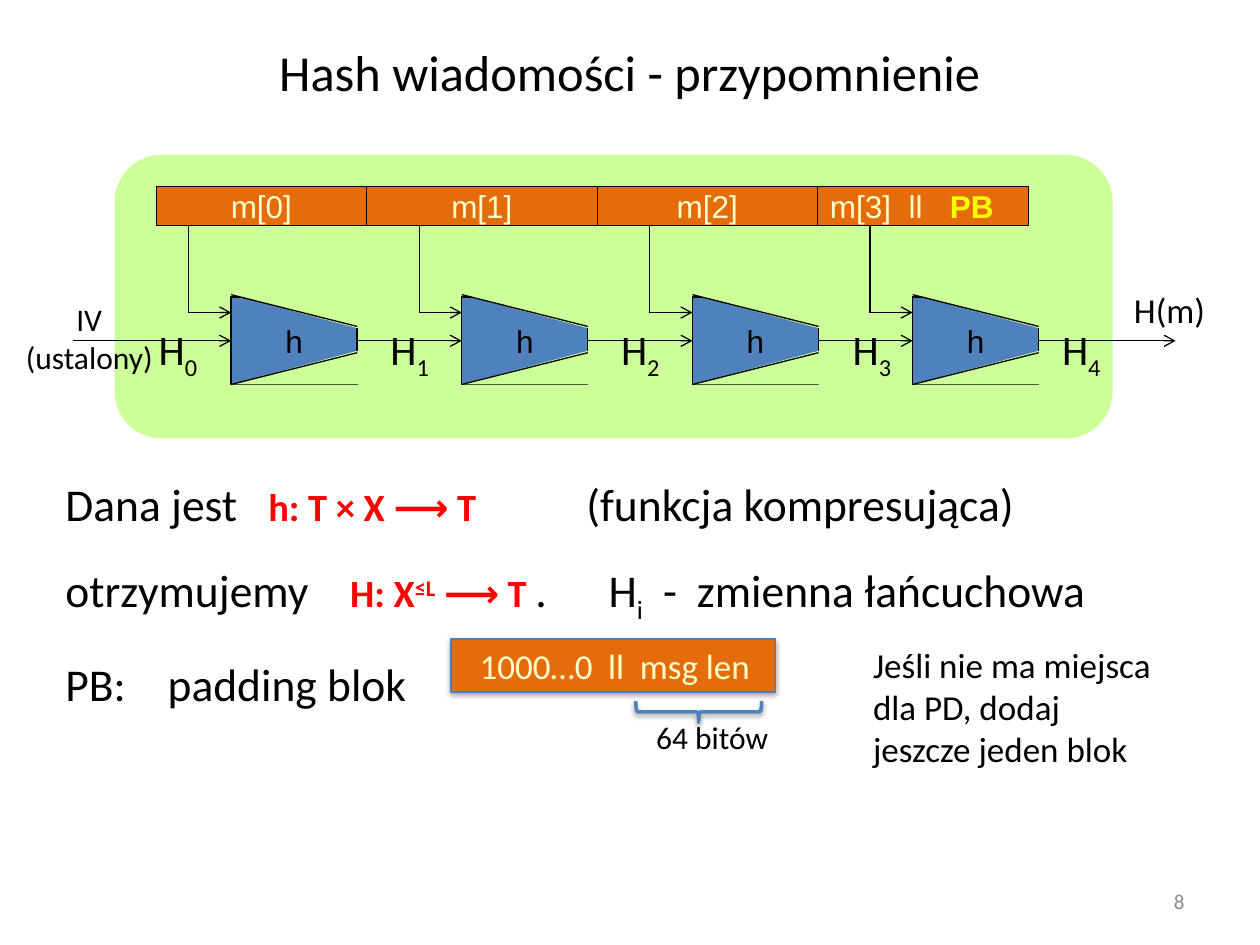
from dataclasses import dataclass
from typing import Optional

import lxml.etree
import pptx
import pptx.dml.color
import pptx.enum.shapes
import pptx.enum.text
import pptx.oxml.ns
import pptx.util

Cm, Pt = pptx.util.Cm, pptx.util.Pt
RGB = pptx.dml.color.RGBColor.from_string
SHAPE = pptx.enum.shapes.MSO_SHAPE
STRAIGHT = pptx.enum.shapes.MSO_CONNECTOR.STRAIGHT
ALIGN = pptx.enum.text.PP_ALIGN
ANCHOR = pptx.enum.text.MSO_ANCHOR
qn = pptx.oxml.ns.qn


@dataclass(frozen=True)
class Theme:
    font: str = "Calibri"
    diagram_font: str = "Arial"
    black: str = "000000"
    gray: str = "8C8C8C"
    red: str = "FF0000"
    yellow: str = "FFFF00"
    cream: str = "FFFFCC"
    green: str = "CCFF99"
    blue: str = "4F81BD"
    blue_edge: str = "4B7EBC"
    orange: str = "E46C0A"
    title: float = 28.8
    body: float = 26
    chain: float = 24
    formula: float = 22
    note: float = 20
    label: float = 18
    page: float = 12
    thin: float = 0.75


T = Theme()


@dataclass(frozen=True)
class Run:
    text: str
    size: Optional[float] = None
    color: Optional[str] = None
    bold: Optional[bool] = None
    baseline: int = 0  # percent, negative for subscript


@dataclass(frozen=True)
class Para:
    runs: tuple[Run, ...]
    size: float
    color: str = T.black
    font: str = T.font
    align: ALIGN = ALIGN.LEFT
    before: float = 0
    tabs: tuple[float, ...] = ()  # cm from the text edge


@dataclass(frozen=True)
class Box:
    x: float
    y: float
    w: float
    h: float

    def emu(self) -> list[int]:
        return [Cm(v) for v in (self.x, self.y, self.w, self.h)]


def write(s, paras: list[Para], wrap: bool = True, anchor=ANCHOR.TOP) -> None:
    tf = s.text_frame
    tf.word_wrap, tf.vertical_anchor = wrap, anchor
    for i, para in enumerate(paras):
        p = tf.paragraphs[0] if i == 0 else tf.add_paragraph()
        p.alignment, p.space_before = para.align, Pt(para.before)
        p.font.size, p.font.name = Pt(para.size), para.font
        p.font.color.rgb = RGB(para.color)
        if para.tabs:
            tab_list = lxml.etree.Element(qn("a:tabLst"))
            for pos in para.tabs:
                lxml.etree.SubElement(tab_list, qn("a:tab"), pos=str(Cm(pos)), algn="l")
            p._p.pPr.find(qn("a:defRPr")).addprevious(tab_list)
        for run in para.runs:
            r = p.add_run()
            r.text, r.font.bold = run.text, run.bold
            if run.size:
                r.font.size = Pt(run.size)
            if run.color:
                r.font.color.rgb = RGB(run.color)
            if run.baseline:
                r._r.get_or_add_rPr().set("baseline", str(run.baseline * 1000))


def text(shapes, box: Box, paras: list[Para], wrap: bool = True, anchor=ANCHOR.TOP) -> None:
    write(shapes.add_textbox(*box.emu()), paras, wrap, anchor)


def shape(shapes, kind, box: Box, fill: Optional[str], edge: Optional[str] = None,
          width: float = T.thin):
    s = shapes.add_shape(kind, *box.emu())
    s.shadow.inherit = False
    if fill:
        s.fill.solid()
        s.fill.fore_color.rgb = RGB(fill)
    else:
        s.fill.background()
    if edge:
        s.line.color.rgb, s.line.width = RGB(edge), Pt(width)
    else:
        s.line.fill.background()
    return s


def drop_shadow(s, alpha: int) -> None:
    effects = s._element.spPr.find(qn("a:effectLst"))
    shadow = lxml.etree.SubElement(effects, qn("a:outerShdw"), blurRad=str(Pt(3.1)),
                                   dist=str(Pt(1.7)), dir="5400000", rotWithShape="0")
    color = lxml.etree.SubElement(shadow, qn("a:srgbClr"), val=T.black)
    lxml.etree.SubElement(color, qn("a:alpha"), val=str(alpha * 1000))


def line(shapes, x1: float, y1: float, x2: float, y2: float, arrow: bool = False,
         start=None, end=None) -> None:
    c = shapes.add_connector(STRAIGHT, Cm(x1), Cm(y1), Cm(x2), Cm(y2))
    c.line.color.rgb, c.line.width = RGB(T.black), Pt(T.thin)
    if arrow:
        lxml.etree.SubElement(c.line._get_or_add_ln(), qn("a:tailEnd"), type="arrow")
    lxml.etree.SubElement(c._element.spPr, qn("a:effectLst"))
    if start is not None:
        c.begin_connect(start, 3)
    if end is not None:
        c.end_connect(end, 1)


STAGE_W, STAGE_H, STAGE_Y = 2.54, 1.76, 5.99
MID_Y = STAGE_Y + STAGE_H / 2
BLOCK_Y, BLOCK_H = 3.76, 0.79


def stage(shapes, x: float):
    """Compression block: a rectangle with two corners cut off."""
    s = shape(shapes, SHAPE.RECTANGLE, Box(x, STAGE_Y, STAGE_W, STAGE_H), T.blue, T.black)
    write(s, [Para((Run("h"),), T.label, font=T.diagram_font, align=ALIGN.CENTER)],
          False, ANCHOR.MIDDLE)
    for y, flip_v, y1, y2 in ((5.94, "1", 5.94, 6.58), (6.96, "0", 7.75, 7.11)):
        corner = shape(shapes, SHAPE.RIGHT_TRIANGLE, Box(x, y, 2.97, 0.79), T.green)
        xfrm = corner._element.spPr.xfrm
        xfrm.set("flipH", "1")
        xfrm.set("flipV", flip_v)
        line(shapes, x, y1, x + STAGE_W, y2)
    return s


def feed(shapes, stage_x: float) -> None:
    """Elbow from a message block to its compression block."""
    x, y = stage_x - 0.86, 6.3
    line(shapes, x, BLOCK_Y + BLOCK_H, x, y)
    line(shapes, x, y, stage_x, y, arrow=True)


def main() -> None:
    prs = pptx.Presentation()
    prs.slide_width, prs.slide_height = Cm(25.4), Cm(19.05)
    shapes = prs.slides.add_slide(prs.slide_layouts[6]).shapes

    # Title and page number
    text(shapes, Box(1.27, 0.76, 22.86, 1.37),
         [Para((Run("Hash wiadomości - przypomnienie"),), T.title, align=ALIGN.CENTER)],
         anchor=ANCHOR.MIDDLE)
    text(shapes, Box(18.2, 17.65, 5.93, 1.02),
         [Para((Run("8"),), T.page, T.gray, align=ALIGN.RIGHT)], anchor=ANCHOR.MIDDLE)

    # Definitions
    formula = dict(size=T.formula, color=T.red, bold=True)
    text(shapes, Box(1.07, 9.47, 22.66, 5.87), [
        Para((Run("Dana jest\t"), Run("h: T × X ⟶ T", **formula),
              Run("\t(funkcja kompresująca)")), T.body, before=5.2, tabs=(4.09, 10.5)),
        Para((Run("otrzymujemy\t"), Run("H: X", **formula),
              Run("≤L", baseline=30, **formula), Run(" ⟶ T ", **formula), Run(".\tH"),
              Run("i", baseline=-25), Run("\t-\tzmienna łańcuchowa")),
             T.body, before=18.2, tabs=(5.74, 10.95, 12.05, 12.73)),
        Para((Run("PB:\tpadding blok"),), T.body, before=18.2, tabs=(2.06,)),
    ])

    # Message blocks
    shape(shapes, SHAPE.ROUNDED_RECTANGLE, Box(2.31, 3.12, 20.12, 5.72), T.green)
    edges = (3.15, 7.39, 12.04, 16.48, 20.73)
    for i, (left, right) in enumerate(zip(edges, edges[1:])):
        s = shape(shapes, SHAPE.RECTANGLE, Box(left, BLOCK_Y, right - left, BLOCK_H),
                  T.orange, T.black)
        runs, align, tabs = (Run(f"m[{i}]"),), ALIGN.CENTER, ()
        if i == 3:
            runs += (Run("\tll\t"), Run("PB", color=T.yellow, bold=True))
            align, tabs = ALIGN.LEFT, (1.59, 2.42)
        write(s, [Para(runs, T.label, T.cream, T.diagram_font, align, tabs=tabs)],
              anchor=ANCHOR.MIDDLE)

    # Compression chain
    stage_xs = (4.66, 9.31, 13.96, 18.4)
    stages = [stage(shapes, x) for x in stage_xs]
    for x in stage_xs:
        feed(shapes, x)
    line(shapes, 1.47, MID_Y, stage_xs[0], MID_Y, True, end=stages[0])
    for x, next_x, s, next_s in zip(stage_xs, stage_xs[1:], stages, stages[1:]):
        line(shapes, x + STAGE_W, MID_Y, next_x, MID_Y, True, s, next_s)
    line(shapes, stage_xs[-1] + STAGE_W, MID_Y, 23.7, MID_Y, True, stages[-1])

    # Chain labels
    text(shapes, Box(0.25, 5.92, 3.1, 1.8),
         [Para((Run(t),), T.label, align=ALIGN.CENTER) for t in ("IV", "(ustalony)")], False)
    text(shapes, Box(22.61, 5.69, 1.96, 1.12), [Para((Run("H(m)"),), T.note)], False)
    for i, x in enumerate((2.95, 7.62, 12.27, 16.94, 21.16)):
        text(shapes, Box(x, 6.4, 1.35, 1.27),
             [Para((Run("H"), Run(str(i), baseline=-25)), T.chain)])

    # Padding block
    s = shape(shapes, SHAPE.RECTANGLE, Box(9.09, 12.88, 6.55, 1.07), T.orange, T.blue_edge)
    drop_shadow(s, 35)
    write(s, [Para((Run("1000…0\tll\tmsg len"),), T.note, T.cream, tabs=(2.59, 3.23))],
          anchor=ANCHOR.MIDDLE)
    s.text_frame.margin_left, s.text_frame.margin_right = Cm(0.58), 0
    brace = shape(shapes, SHAPE.RIGHT_BRACE, Box(13.87, 13.08, 0.43, 2.54), None, T.blue, 2)
    brace.rotation = 90
    drop_shadow(brace, 38)
    text(shapes, Box(12.98, 14.35, 2.79, 1.02), [Para((Run("64 bitów"),), T.label)], False)
    text(shapes, Box(17.35, 12.85, 6.32, 2.82), [
        Para((Run(t),), T.note)
        for t in ("Jeśli nie ma miejsca", "dla PD, dodaj", "jeszcze jeden blok")])

    prs.save("out.pptx")


if __name__ == "__main__":
    main()
